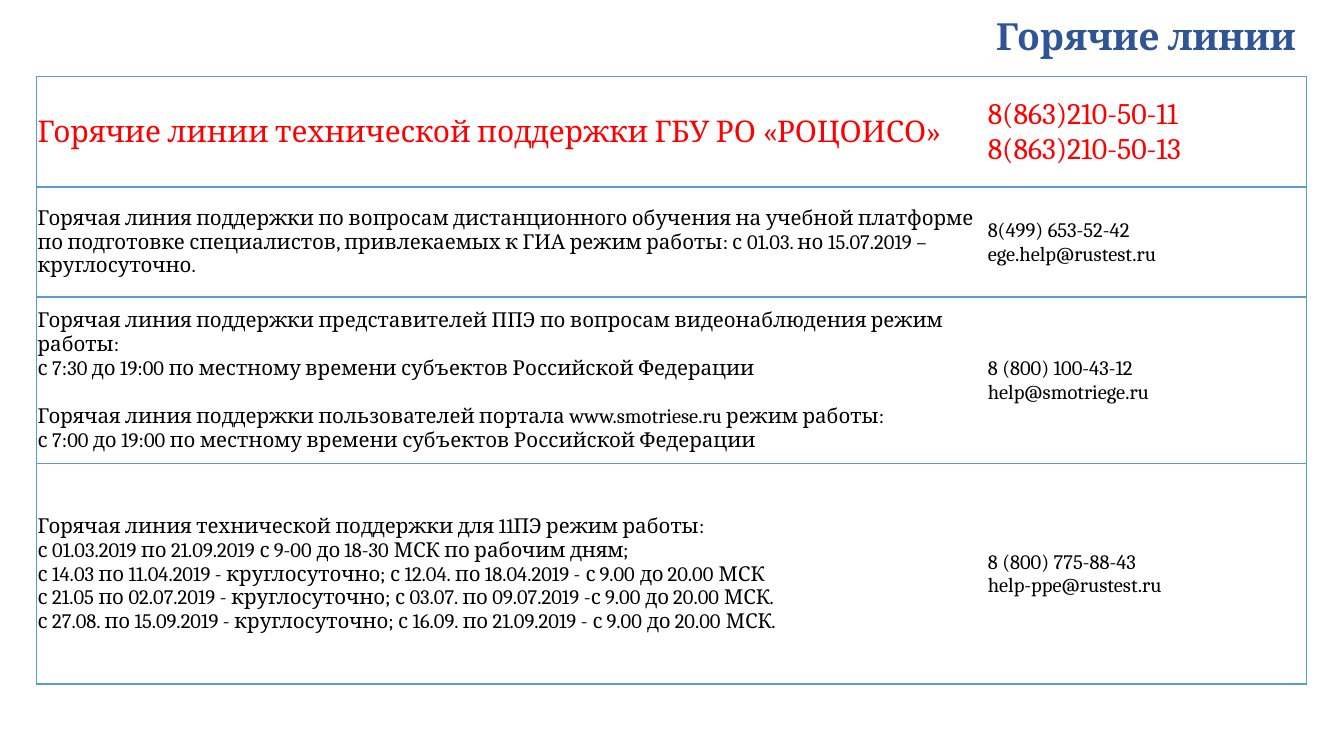
"""Build the hotline contacts slide."""
from dataclasses import dataclass

from lxml.etree import SubElement
from pptx import Presentation
from pptx.dml.color import RGBColor
from pptx.enum.text import MSO_ANCHOR as Anchor, MSO_AUTO_SIZE as AutoSize, PP_ALIGN as Align
from pptx.oxml.ns import qn
from pptx.util import Inches, Pt


@dataclass(frozen=True)
class Theme:
    """Colours and type sizes of the slide."""
    font: str = "Cambria"
    title_color: str = "2F5597"
    accent: str = "FF0000"
    text: str = "000000"
    border: str = "5B9BD5"
    background: str = "FFFFFF"
    title_size: int = 20
    lead_size: int = 16
    body_size: int = 11
    block_gap: int = 13
    border_width: int = 1


@dataclass(frozen=True)
class Hotline:
    """One table row: blocks of description lines, contact lines and row height."""
    blocks: tuple[tuple[str, ...], ...]
    contacts: tuple[str, ...]
    height: float
    lead: bool = False


THEME = Theme()
PLAIN_TABLE_STYLE = "{2D5ABB26-0587-4C30-8999-92F81FD0307C}"
COLUMN_WIDTHS = (7.07, 2.38)
HOTLINES = (
    Hotline(
        (("Горячие линии технической поддержки ГБУ РО «РОЦОИСО»",),),
        ("8(863)210-50-11", "8(863)210-50-13"), 0.82, lead=True),
    Hotline(
        (("Горячая линия поддержки по вопросам дистанционного обучения на учебной платформе "
          "по подготовке специалистов, привлекаемых к ГИА режим работы: с 01.03. но 15.07.2019 – "
          "круглосуточно.",),),
        ("8(499) 653-52-42", "ege.help@rustest.ru"), 0.82),
    Hotline(
        (("Горячая линия поддержки представителей ППЭ по вопросам видеонаблюдения режим работы:",
          "с 7:30 до 19:00 по местному времени субъектов Российской Федерации"),
         ("Горячая линия поддержки пользователей портала www.smotriese.ru режим работы:",
          "с 7:00 до 19:00 по местному времени субъектов Российской Федерации")),
        ("8 (800) 100-43-12", "help@smotriege.ru"), 1.24),
    Hotline(
        (("Горячая линия технической поддержки для 11ПЭ режим работы:",
          "с 01.03.2019 по 21.09.2019 с 9-00 до 18-30 МСК по рабочим дням;",
          "с 14.03 по 11.04.2019 - круглосуточно; с 12.04. по 18.04.2019 - с 9.00 до 20.00 МСК",
          "с 21.05 по 02.07.2019 - круглосуточно; с 03.07. по 09.07.2019 -с 9.00 до 20.00 МСК.",
          "с 27.08. по 15.09.2019 - круглосуточно; с 16.09. по 21.09.2019 - с 9.00 до 20.00 МСК."),),
        ("8 (800) 775-88-43", "help-ppe@rustest.ru"), 1.64),
)


def apply_format(target, values: dict) -> None:
    """Set each named attribute on the target."""
    for name, value in values.items():
        setattr(target, name, value)


def format_font(font, size: int, color: str, bold: bool = False) -> None:
    """Apply the theme face with a size, colour and weight."""
    apply_format(font, {"name": THEME.font, "size": Pt(size), "bold": bold})
    font.color.rgb = RGBColor.from_string(color)


def set_borders(cell, visible: str) -> None:
    """Draw the visible sides of a cell."""
    properties = cell._tc.get_or_add_tcPr()
    for side in visible:
        line = SubElement(properties, qn(f"a:ln{side}"), w=str(Pt(THEME.border_width)))
        fill = SubElement(line, qn("a:solidFill"))
        SubElement(fill, qn("a:srgbClr"), val=THEME.border)


def fill_cell(cell, blocks: tuple[tuple[str, ...], ...], lead: bool, borders: str) -> None:
    """Write blocks of lines into a cell, with a gap between blocks."""
    apply_format(cell, {
        "vertical_anchor": Anchor.MIDDLE, "margin_left": Inches(0.01),
        "margin_right": Inches(0.01), "margin_top": Inches(0.01), "margin_bottom": 0})
    set_borders(cell, borders)
    cell.fill.solid()
    cell.fill.fore_color.rgb = RGBColor.from_string(THEME.background)
    size = THEME.lead_size if lead else THEME.body_size
    color = THEME.accent if lead else THEME.text
    frame = cell.text_frame
    for block_index, block in enumerate(blocks):
        for line_index, text in enumerate(block):
            is_first = block_index == line_index == 0
            paragraph = frame.paragraphs[0] if is_first else frame.add_paragraph()
            if block_index and not line_index:
                paragraph.space_before = Pt(THEME.block_gap)
            run = paragraph.add_run()
            run.text = text
            format_font(run.font, size, color)


def add_title(slide, text: str) -> None:
    """Place and format the slide title."""
    title = slide.shapes.title
    apply_format(title, {"left": Inches(0.99), "top": Inches(0.02),
                         "width": Inches(8.74), "height": Inches(0.53)})
    frame = title.text_frame
    apply_format(frame, {
        "word_wrap": True, "auto_size": AutoSize.NONE, "vertical_anchor": Anchor.MIDDLE,
        "margin_left": Inches(0.09), "margin_right": Inches(0.09),
        "margin_top": Inches(0.04), "margin_bottom": Inches(0.04)})
    paragraph = frame.paragraphs[0]
    apply_format(paragraph, {"alignment": Align.RIGHT, "line_spacing": 0.9})
    run = paragraph.add_run()
    run.text = text
    format_font(run.font, THEME.title_size, THEME.title_color, bold=True)


def add_hotline_table(slide, hotlines: tuple[Hotline, ...]) -> None:
    """Add the table of hotlines and their contacts."""
    height = sum(hotline.height for hotline in hotlines)
    table = slide.shapes.add_table(
        len(hotlines), len(COLUMN_WIDTHS), Inches(0.27), Inches(0.57),
        Inches(sum(COLUMN_WIDTHS)), Inches(height)).table
    apply_format(table, {"first_row": False, "horz_banding": False})
    table._tbl.tblPr.find(qn("a:tableStyleId")).text = PLAIN_TABLE_STYLE
    for column, width in zip(table.columns, COLUMN_WIDTHS):
        column.width = Inches(width)
    for index, hotline in enumerate(hotlines):
        table.rows[index].height = Inches(hotline.height)
        fill_cell(table.cell(index, 0), hotline.blocks, hotline.lead, "LTB")
        fill_cell(table.cell(index, 1), (hotline.contacts,), hotline.lead, "RTB")


def main() -> None:
    """Create and save the presentation."""
    presentation = Presentation()
    width = Inches(10)
    apply_format(presentation, {"slide_width": width, "slide_height": width * 9 // 16})
    slide = presentation.slides.add_slide(presentation.slide_layouts[5])
    add_title(slide, "Горячие линии")
    add_hotline_table(slide, HOTLINES)
    presentation.save("out.pptx")


if __name__ == "__main__":
    main()
